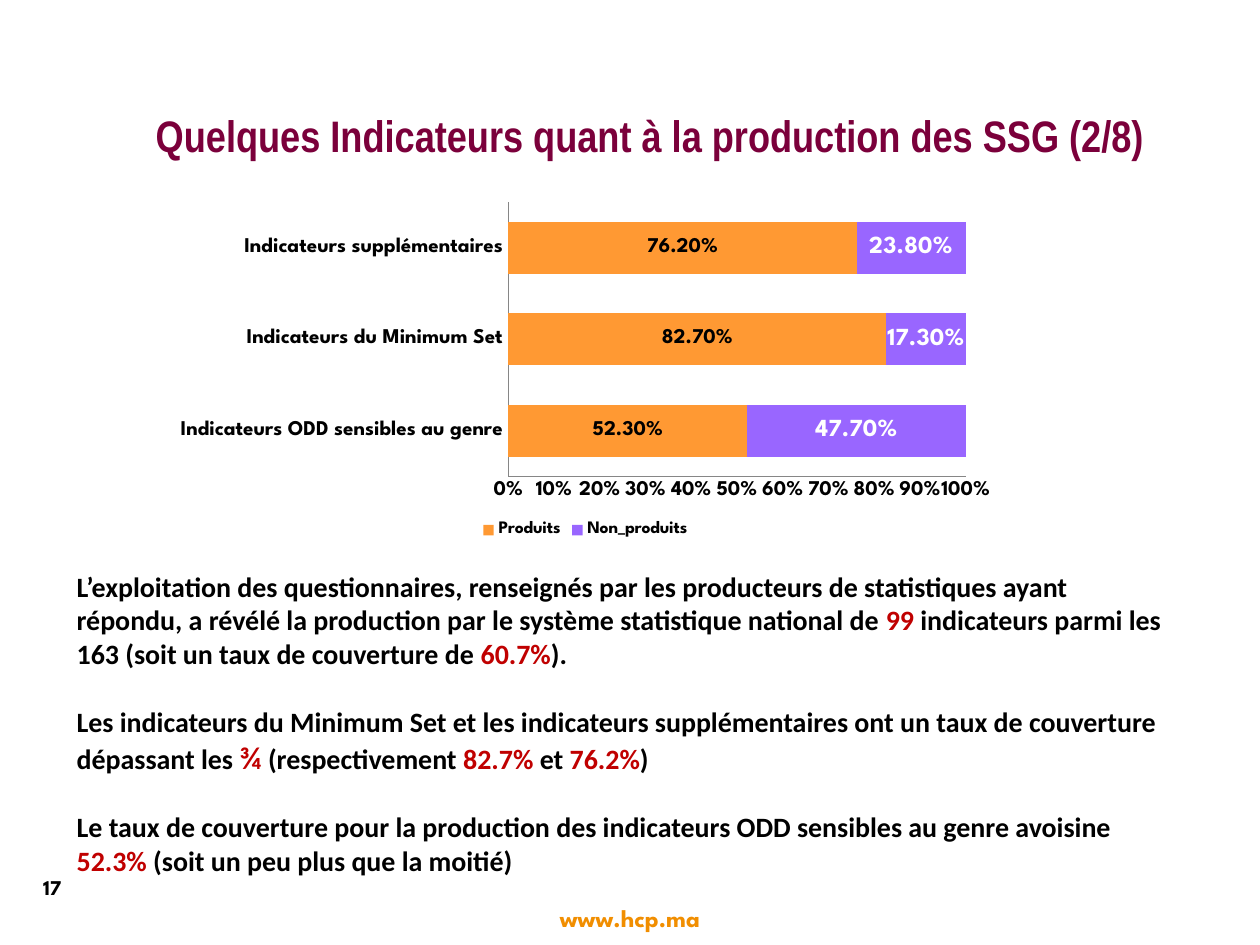
from pptx import Presentation
from pptx.chart.data import CategoryChartData
from pptx.dml.color import RGBColor
from pptx.enum.chart import XL_CHART_TYPE, XL_LEGEND_POSITION, XL_TICK_MARK
from pptx.enum.shapes import MSO_SHAPE
from pptx.enum.text import MSO_ANCHOR, MSO_AUTO_SIZE, PP_ALIGN
from pptx.util import Inches, Pt

STACKED_BAR = XL_CHART_TYPE.BAR_STACKED_100
LEGEND_BOTTOM = XL_LEGEND_POSITION.BOTTOM
NO_TICK = XL_TICK_MARK.NONE
ELLIPSE = MSO_SHAPE.OVAL
MIDDLE = MSO_ANCHOR.MIDDLE
NO_FIT, GROW = MSO_AUTO_SIZE.NONE, MSO_AUTO_SIZE.SHAPE_TO_FIT_TEXT
LEFT, CENTER, RIGHT = PP_ALIGN.LEFT, PP_ALIGN.CENTER, PP_ALIGN.RIGHT

BLACK = RGBColor(0x00, 0x00, 0x00)
WHITE = RGBColor(0xFF, 0xFF, 0xFF)
PLUM = RGBColor(0x7B, 0x00, 0x3B)
RED = RGBColor(0xC0, 0x00, 0x00)
AMBER = RGBColor(0xF1, 0x8E, 0x00)
ORANGE = RGBColor(0xFF, 0x99, 0x33)
VIOLET = RGBColor(0x99, 0x66, 0xFF)
GREY = RGBColor(0x86, 0x86, 0x86)

CELL = Inches(0.1)  # the slide is a grid of 100 columns by 75 rows

CATEGORIES = ["Indicateurs ODD sensibles au genre", "Indicateurs du Minimum Set",
              "Indicateurs supplémentaires"]
# name, values, fill, label size, label colour
SERIES = [("Produits", (0.523, 0.827, 0.762), ORANGE, 12, BLACK),
          ("Non_produits", (0.477, 0.173, 0.238), VIOLET, 14, WHITE)]

# Every second part between bars is highlighted
FINDINGS = [
    "L’exploitation des questionnaires, renseignés par les producteurs de statistiques "
    "ayant répondu, a révélé la production par le système statistique national de |99| "
    "indicateurs parmi les 163 (soit un taux de couverture de |60.7%|).",
    "Les indicateurs du Minimum Set et les indicateurs supplémentaires ont un taux de "
    "couverture dépassant les |¾| (respectivement |82.7%| et |76.2%|)",
    "Le taux de couverture pour la production des indicateurs ODD sensibles au genre "
    "avoisine |52.3%| (soit un peu plus que la moitié)",
]


class SlideBuilder:
    title_font = "Arial Narrow"
    body_font = "Calibri"
    accent_font = "League Spartan"

    def __init__(self, deck):
        self.slide = deck.slides.add_slide(deck.slide_layouts[5])

    def area(self, column, row, columns, rows):
        return [round(length * CELL) for length in (column, row, columns, rows)]

    def style(self, font, name, size, color):
        font.name, font.size, font.bold = name, Pt(size), True
        font.color.rgb = color

    def set_line(self, shape, text, name, size, color, align):
        shape.text_frame.word_wrap = True
        shape.text_frame.text = text
        para = shape.text_frame.paragraphs[0]
        para.alignment = align
        self.style(para.runs[0].font, name, size, color)

    def title(self, text, *place):
        title = self.slide.shapes.title
        title.left, title.top, title.width, title.height = self.area(*place)
        self.set_line(title, text, self.title_font, 25.2, PLUM, CENTER)
        title.text_frame.auto_size = NO_FIT
        title.text_frame.vertical_anchor = MIDDLE

    def footer(self, text, *place):
        box = self.slide.shapes.add_textbox(*self.area(*place))
        self.set_line(box, text, self.accent_font, 14, AMBER, CENTER)

    def page_number(self, text, *place):
        disc = self.slide.shapes.add_shape(ELLIPSE, *self.area(*place))
        disc.shadow.inherit = False
        disc.fill.background()
        disc.line.fill.background()
        self.set_line(disc, text, self.accent_font, 12, BLACK, RIGHT)
        disc.text_frame.margin_left = 0
        disc.text_frame.vertical_anchor = MIDDLE

    def findings(self, texts, *place):
        box = self.slide.shapes.add_textbox(*self.area(*place))
        frame = box.text_frame
        frame.word_wrap = True
        frame.auto_size = GROW
        frame.vertical_anchor = MIDDLE
        for index, text in enumerate(texts):
            para = frame.add_paragraph() if index else frame.paragraphs[0]
            para.alignment = LEFT
            if index:
                para.space_before = Pt(19.5)
            for part, words in enumerate(text.split("|")):
                span = para.add_run()
                span.text = words
                self.style(span.font, self.body_font, 18 if words == "¾" else 16,
                           RED if part % 2 else BLACK)

    def bar_chart(self, categories, series, *place):
        data = CategoryChartData(number_format="0.00%")
        data.categories = categories
        for name, values, *_ in series:
            data.add_series(name, values)
        chart = self.slide.shapes.add_chart(STACKED_BAR, *self.area(*place), data).chart
        chart.has_title = False
        self.style(chart.font, self.accent_font, 10, BLACK)

        # Axes and legend
        for axis in (chart.category_axis, chart.value_axis):
            axis.major_tick_mark = axis.minor_tick_mark = NO_TICK
            axis.has_major_gridlines = False
            axis.format.line.color.rgb = GREY
            axis.format.line.width = Pt(0.75)
            self.style(axis.tick_labels.font, self.accent_font, 12, BLACK)
        chart.value_axis.tick_labels.number_format = "0%"
        chart.value_axis.tick_labels.number_format_is_linked = False
        chart.has_legend = True
        chart.legend.position = LEGEND_BOTTOM
        chart.legend.include_in_layout = False
        self.style(chart.legend.font, self.accent_font, 10, BLACK)

        # Bars and their labels
        plot = chart.plots[0]
        plot.gap_width, plot.overlap = 75, 100
        plot.vary_by_categories = False
        for bars, (_, _, fill, size, color) in zip(plot.series, series):
            bars.format.fill.solid()
            bars.format.fill.fore_color.rgb = fill
            labels = bars.data_labels
            labels.show_value = True
            labels.number_format = "0.00%"
            labels.number_format_is_linked = False
            self.style(labels.font, self.accent_font, size, color)


def main():
    deck = Presentation()
    deck.slide_width, deck.slide_height = 100 * CELL, 75 * CELL
    page = SlideBuilder(deck)
    page.footer("www.hcp.ma", 38.2, 71.2, 23.6, 3.3)
    page.title("Quelques Indicateurs quant à la production des SSG (2/8)", 5.1, 8.4, 93, 4.6)
    page.page_number("17", 1.6, 67.9, 5, 5)
    page.bar_chart(CATEGORIES, SERIES, 13, 15.5, 66.9, 27.6)
    page.findings(FINDINGS, 5.1, 44.6, 88.2, 25.6)
    deck.save("out.pptx")


if __name__ == "__main__":
    main()
